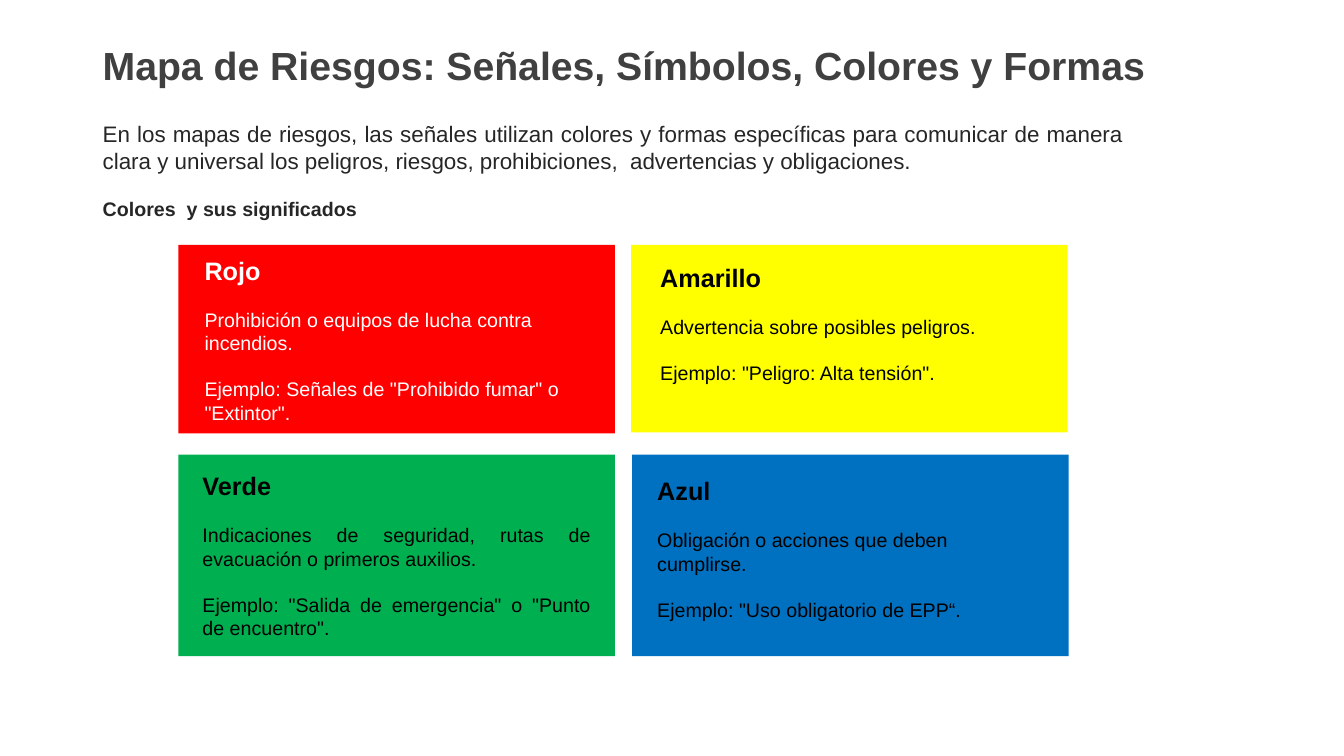
from pptx import Presentation
from pptx.dml.color import RGBColor
from pptx.enum.shapes import MSO_SHAPE as Shape
from pptx.enum.text import MSO_AUTO_SIZE as AutoSize, PP_ALIGN as Align
from pptx.util import Inches, Pt

FONT = "Arial"
LINE_GAP = 16  # points between the paragraphs of a card

# Fill, panel box, text colour, text box, alignment, heading and paragraphs
CARDS = [
    ("FF0000", (1.77, 2.43, 4.33, 1.87), "FFFFFF", (1.93, 2.48, 3.99, 1.82), Align.LEFT,
     "Rojo", "Prohibición o equipos de lucha contra incendios.",
     'Ejemplo: Señales de "Prohibido fumar" o "Extintor".'),
    ("FFFF00", (6.26, 2.43, 4.33, 1.86), "000000", (6.45, 2.55, 3.94, 1.35), Align.LEFT,
     "Amarillo", "Advertencia sobre posibles peligros.",
     'Ejemplo: "Peligro: Alta tensión".'),
    ("00B050", (1.77, 4.51, 4.33, 2), "000000", (1.91, 4.62, 4.05, 1.82), Align.JUSTIFY,
     "Verde", "Indicaciones de seguridad, rutas de evacuación o primeros auxilios.",
     'Ejemplo: "Salida de emergencia" o "Punto de encuentro".'),
    ("0070C0", (6.27, 4.51, 4.33, 2), "000000", (6.42, 4.67, 3.88, 1.58), Align.LEFT,
     "Azul", "Obligación o acciones que deben cumplirse.",
     'Ejemplo: "Uso obligatorio de EPP“.'),
]


def rgb(color):
    return RGBColor.from_string(color)


def add_text(s, box, paragraphs, color, align=Align.LEFT):
    """Add a text box; each paragraph is (text, size, bold)."""
    tf = s.shapes.add_textbox(*map(Inches, box)).text_frame
    tf.word_wrap = True
    tf.auto_size = AutoSize.SHAPE_TO_FIT_TEXT
    for i, (text, size, bold) in enumerate(paragraphs):
        p = tf.add_paragraph() if i else tf.paragraphs[0]
        p.alignment = align
        if i:
            p.space_before = Pt(LINE_GAP)
        r = p.add_run()
        r.text = text
        r.font.name = FONT
        r.font.size = Pt(size)
        r.font.bold = bold
        r.font.color.rgb = rgb(color)


def add_panel(s, box, fill):
    sp = s.shapes.add_shape(Shape.SNIP_1_RECTANGLE, *map(Inches, box))
    sp.adjustments[0] = 0
    sp.shadow.inherit = False
    sp.fill.solid()
    sp.fill.fore_color.rgb = rgb(fill)
    sp.line.fill.background()


def add_card(s, fill, panel, color, box, align, heading, meaning, example):
    add_panel(s, panel, fill)
    paragraphs = [(heading, 18, True), (meaning, 14, False), (example, 14, False)]
    add_text(s, box, paragraphs, color, align)


def main():
    prs = Presentation()
    prs.slide_width, prs.slide_height = Inches(13.33), Inches(7.5)
    s = prs.slides.add_slide(prs.slide_layouts[6])

    # Title and introduction
    add_text(s, (0.92, 0.36, 11.31, 0.57),
             [("Mapa de Riesgos: Señales, Símbolos, Colores y Formas", 28, True)], "404040")
    add_text(s, (0.92, 1.14, 10.32, 0.64),
             [("En los mapas de riesgos, las señales utilizan colores y formas específicas "
               "para comunicar de manera clara y universal los peligros, riesgos, "
               "prohibiciones,  advertencias y obligaciones.", 16, False)],
             "262626", Align.JUSTIFY)
    add_text(s, (0.92, 1.9, 3.35, 0.34),
             [("Colores  y sus significados", 14, True)], "262626")

    # Colour cards
    for card in CARDS:
        add_card(s, *card)

    prs.save("out.pptx")


if __name__ == "__main__":
    main()
